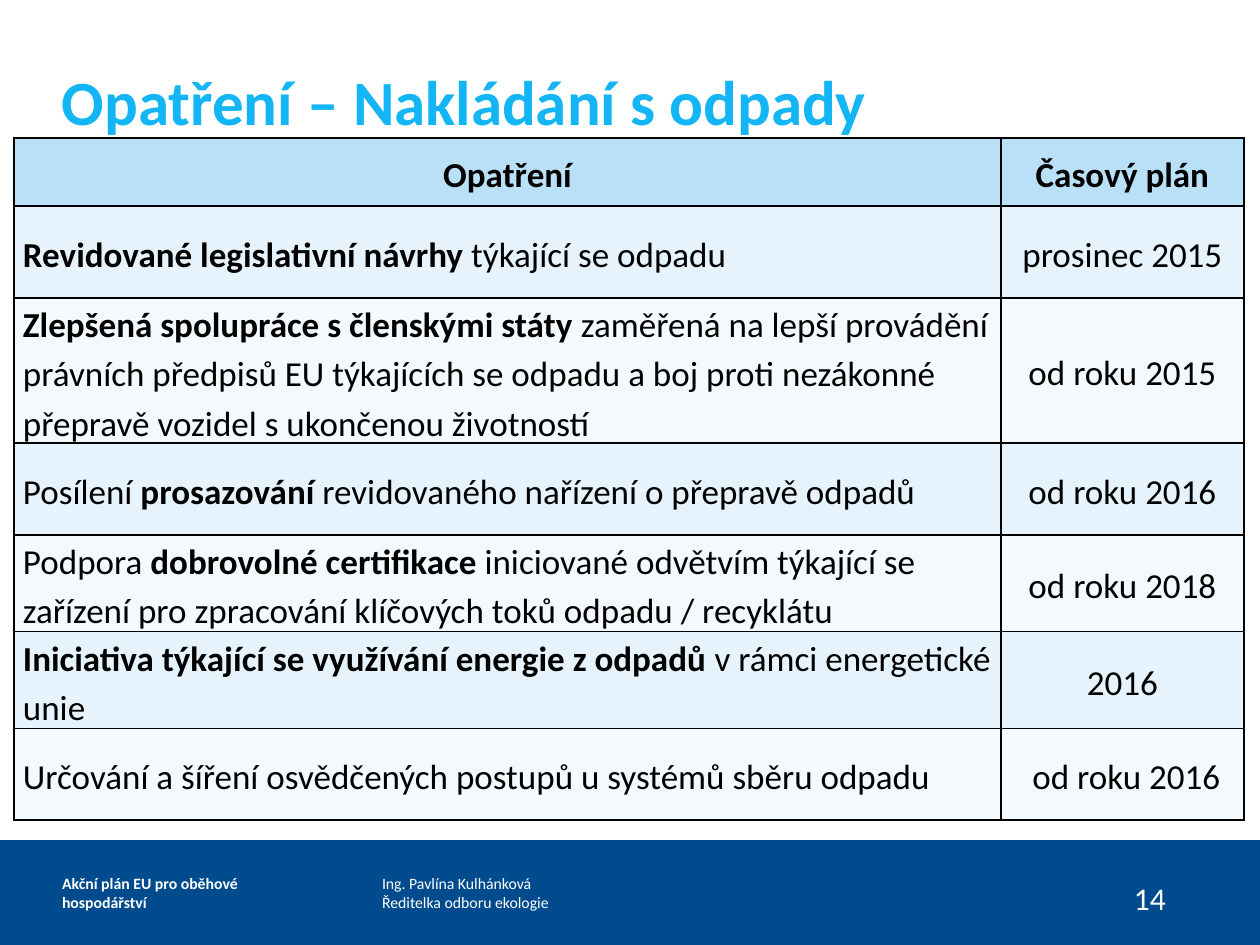
from dataclasses import dataclass

from lxml.etree import SubElement
from pptx import Presentation
from pptx.dml.color import RGBColor as Rgb
from pptx.enum.shapes import MSO_SHAPE as Shape
from pptx.enum.text import MSO_ANCHOR as Anchor, PP_ALIGN as Align
from pptx.oxml.ns import qn
from pptx.util import Emu, Pt

SCALE = 914400 / 126


@dataclass(frozen=True)
class Theme:
    """Colours, type sizes and the font of the slide."""
    font: str = "Calibri"
    navy: str = "004B8D"
    sky: str = "13B5F4"
    white: str = "FFFFFF"
    black: str = "000000"
    header: str = "B9E0F7"
    bands: tuple = ("E6F3FC", "F3F9FD")
    title_size: int = 36
    table_size: int = 20
    number_size: int = 18
    footer_size: int = 9


THEME = Theme()
TITLE = "Opatření – Nakládání s odpady"
HEADINGS = ("*Opatření*", "*Časový plán*")
MEASURES = (
    ("*Revidované legislativní návrhy* týkající se odpadu", "prosinec 2015"),
    ("*Zlepšená spolupráce s členskými státy* zaměřená na lepší provádění právních předpisů EU "
     "týkajících se odpadu a boj proti nezákonné přepravě vozidel s ukončenou životností",
     "od roku 2015"),
    ("Posílení* prosazování* revidovaného nařízení o přepravě odpadů", "od roku 2016"),
    ("Podpora *dobrovolné certifikace* iniciované odvětvím týkající se zařízení pro zpracování "
     "klíčových toků odpadu / recyklátu", "od roku 2018"),
    ("*Iniciativa týkající se využívání energie z odpadů *v rámci energetické unie", "2016"),
    ("Určování a šíření osvědčených postupů u systémů sběru odpadu", " od roku 2016"),
)
COLUMN_WIDTHS = (987, 243)
ROW_HEIGHTS = (68, 92, 145, 92, 96, 96, 92)


def px(length):
    """Turn px into EMU."""
    return Emu(round(length * SCALE))


def apply(target, values):
    """Set every attribute named in values on target."""
    for name, value in values.items():
        setattr(target, name, value)


def margins(side, end=0):
    """Return the four text insets as format values."""
    return {"margin_left": px(side), "margin_right": px(side),
            "margin_top": px(end), "margin_bottom": px(end)}


def write(paragraph, marked, size, color):
    """Write text whose parts between asterisks are bold."""
    for index, part in enumerate(marked.split("*")):
        if part:
            run = paragraph.add_run()
            run.text = part
            apply(run.font, {"name": THEME.font, "size": Pt(size), "bold": index % 2 == 1})
            run.font.color.rgb = Rgb.from_string(color)


def add_label(slide, box, lines, size, color, **layout):
    """Place a wrapped text box with one paragraph per line."""
    frame = slide.shapes.add_textbox(*map(px, box)).text_frame
    apply(frame, {"word_wrap": True, "vertical_anchor": Anchor.MIDDLE, **margins(0), **layout})
    for index, line in enumerate(lines):
        paragraph = frame.add_paragraph() if index else frame.paragraphs[0]
        write(paragraph, line, size, color)


def add_page(slide, box):
    """Fill the slide with navy and lay the white page over it."""
    slide.background.fill.solid()
    slide.background.fill.fore_color.rgb = Rgb.from_string(THEME.navy)
    page = slide.shapes.add_shape(Shape.RECTANGLE, *map(px, box))
    page.shadow.inherit = False
    page.fill.solid()
    page.fill.fore_color.rgb = Rgb.from_string(THEME.white)
    page.line.fill.background()


def add_footer(slide, box):
    """Place the talk name, the speaker and the page number."""
    left, top, _, height = box
    add_label(slide, (left + 62, top, 258, height), ["*Akční plán EU pro oběhové hospodářství*"],
              THEME.footer_size, THEME.white)
    add_label(slide, (left + 382, top, 248, height),
              ["Ing. Pavlína Kulhánková", "Ředitelka odboru ekologie"],
              THEME.footer_size, THEME.white)
    add_label(slide, (left + 1121, top + 33, 63, 50), ["14"], THEME.number_size, THEME.white,
              vertical_anchor=Anchor.TOP, **margins(13, 6))


def add_borders(cell):
    """Draw a thin black line on each side of a cell, ahead of its fill."""
    properties = cell._tc.get_or_add_tcPr()
    for index, side in enumerate(("a:lnL", "a:lnR", "a:lnT", "a:lnB")):
        line = SubElement(properties, qn(side), w=str(Pt(1)))
        color = SubElement(SubElement(line, qn("a:solidFill")), qn("a:srgbClr"))
        color.set("val", THEME.black)
        properties.insert(index, line)


def fill_cell(cell, marked, fill, align):
    """Write and colour one table cell."""
    apply(cell, {"vertical_anchor": Anchor.MIDDLE, **margins(9)})
    cell.fill.solid()
    cell.fill.fore_color.rgb = Rgb.from_string(fill)
    add_borders(cell)
    paragraph = cell.text_frame.paragraphs[0]
    apply(paragraph, {"alignment": align, "line_spacing": 1.15})
    write(paragraph, marked, THEME.table_size, THEME.black)


def add_measures(slide, left, top):
    """Place the table of measures and their timing."""
    rows = (HEADINGS, *MEASURES)
    table = slide.shapes.add_table(len(rows), len(HEADINGS), px(left), px(top),
                                   px(sum(COLUMN_WIDTHS)), px(sum(ROW_HEIGHTS))).table
    for column, width in zip(table.columns, COLUMN_WIDTHS):
        column.width = px(width)
    for index, (row, height, texts) in enumerate(zip(table.rows, ROW_HEIGHTS, rows)):
        row.height = px(height)
        fill = THEME.bands[(index - 1) % 2] if index else THEME.header
        aligns = (Align.LEFT if index else Align.CENTER, Align.CENTER)
        for cell, marked, align in zip(row.cells, texts, aligns):
            fill_cell(cell, marked, fill, align)


def main():
    """Build and save the slide."""
    deck = Presentation()
    apply(deck, {"slide_width": px(1260), "slide_height": px(945)})
    slide = deck.slides.add_slide(deck.slide_layouts[6])
    add_page(slide, (0, 0, 1260, 840))
    add_footer(slide, (0, 840, 1260, 105))
    add_measures(slide, 14, 138)
    add_label(slide, (62, 62, 1135, 77), [f"*{TITLE}*"], THEME.title_size, THEME.sky)
    deck.save("out.pptx")


if __name__ == "__main__":
    main()
